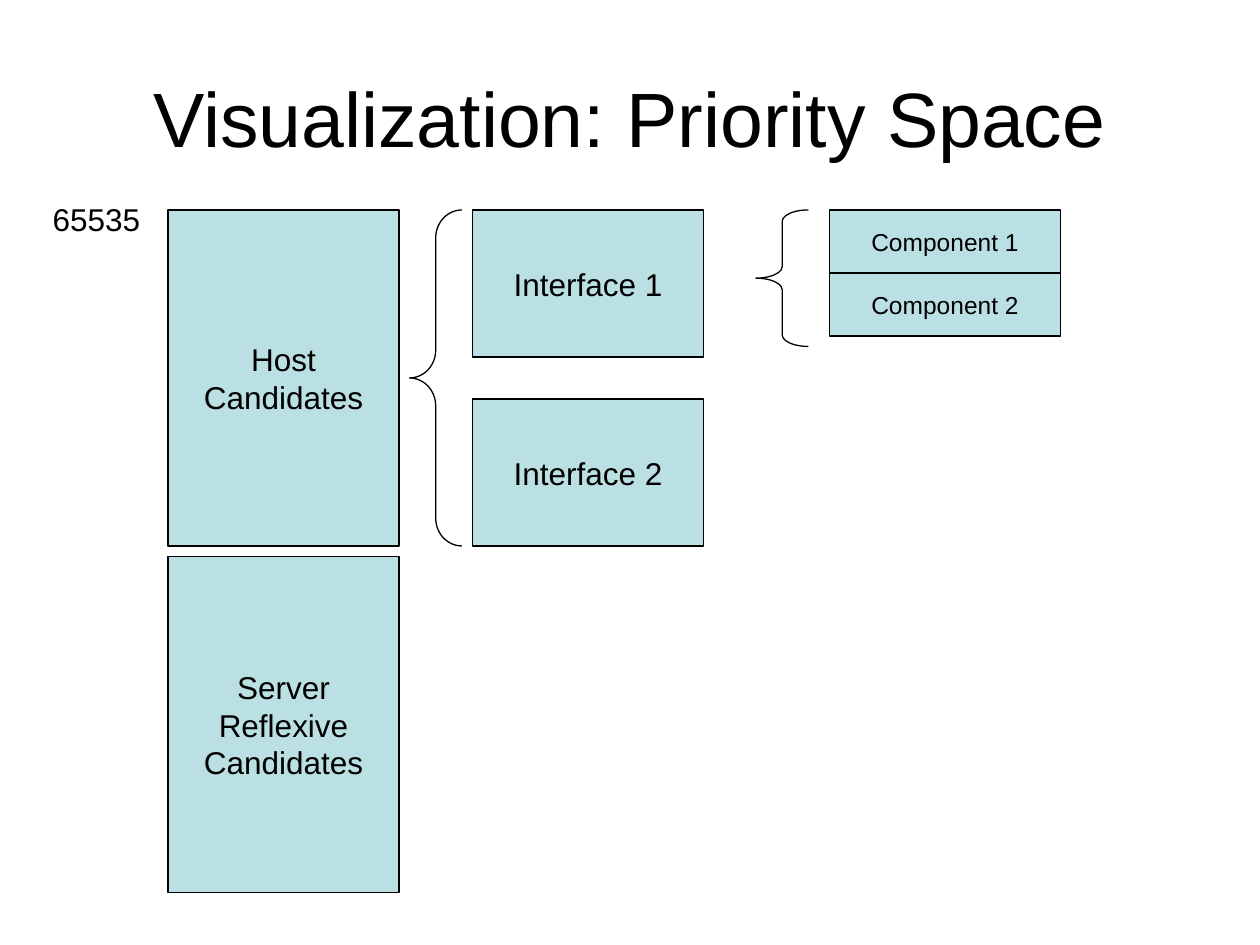
from dataclasses import dataclass

from pptx import Presentation
from pptx.dml.color import RGBColor
from pptx.enum.shapes import MSO_SHAPE as Preset
from pptx.enum.text import MSO_ANCHOR as Anchor, MSO_AUTO_SIZE as AutoSize, PP_ALIGN as Align
from pptx.util import Pt


@dataclass(frozen=True)
class Theme:
    font: str = "Arial"
    ink: RGBColor = RGBColor(0x00, 0x00, 0x00)
    block: RGBColor = RGBColor(0xBB, 0xE0, 0xE3)
    outline: float = 0.75
    title: int = 44
    body: int = 18
    small: int = 14


THEME = Theme()
TOP = 120
BLOCK_WIDTH = 132
BRACE_WIDTH = 30


def write(frame, text, size=THEME.body, align=Align.CENTER, anchor=Anchor.MIDDLE, wrap=False):
    """Fill a text frame, one paragraph for each line of text."""
    frame.word_wrap = wrap
    frame.vertical_anchor = anchor
    frame.text = text
    for line in frame.paragraphs:
        line.alignment = align
        line.font.size = Pt(size)
        line.font.name = THEME.font
        line.font.color.rgb = THEME.ink


def add_label(slide, text, left, top, width, height, **text_format):
    label = slide.shapes.add_textbox(Pt(left), Pt(top), Pt(width), Pt(height))
    write(label.text_frame, text, **text_format)
    return label


def add_outlined(slide, preset, left, top, width, height):
    outlined = slide.shapes.add_shape(preset, Pt(left), Pt(top), Pt(width), Pt(height))
    outlined.shadow.inherit = False
    outlined.line.color.rgb = THEME.ink
    outlined.line.width = Pt(THEME.outline)
    return outlined


def add_blocks(slide, texts, left, height, gap=0, size=THEME.body):
    """Stack equal blocks downwards from the common top edge."""
    for row, text in enumerate(texts):
        top = TOP + row * (height + gap)
        block = add_outlined(slide, Preset.RECTANGLE, left, top, BLOCK_WIDTH, height)
        block.fill.solid()
        block.fill.fore_color.rgb = THEME.block
        write(block.text_frame, text, size=size)


def add_brace(slide, left, height, curl):
    brace = add_outlined(slide, Preset.LEFT_BRACE, left, TOP, BRACE_WIDTH, height)
    brace.fill.background()
    brace.adjustments[0] = curl
    brace.adjustments[1] = 0.5


def main():
    deck = Presentation()
    deck.slide_width, deck.slide_height = Pt(720), Pt(540)
    slide = deck.slides.add_slide(deck.slide_layouts[6])

    # Title and highest priority value
    add_label(slide, "Visualization: Priority Space", 36, 21.6, 648, 90,
              size=THEME.title, wrap=True)
    highest = add_label(slide, "65535", 23, 111, 65, 29, align=Align.LEFT, anchor=Anchor.TOP)
    highest.text_frame.auto_size = AutoSize.SHAPE_TO_FIT_TEXT

    # Candidate types
    add_blocks(slide, ["Host\nCandidates", "Server\nReflexive\nCandidates"],
               left=96, height=192, gap=6)

    # Host candidates split by interface
    add_brace(slide, left=234, height=192, curl=0.53)
    add_blocks(slide, ["Interface 1", "Interface 2"], left=270, height=84, gap=24)

    # First interface split by component
    add_brace(slide, left=432, height=78, curl=0.22)
    add_blocks(slide, ["Component 1", "Component 2"], left=474, height=36, size=THEME.small)

    deck.save("out.pptx")


if __name__ == "__main__":
    main()
